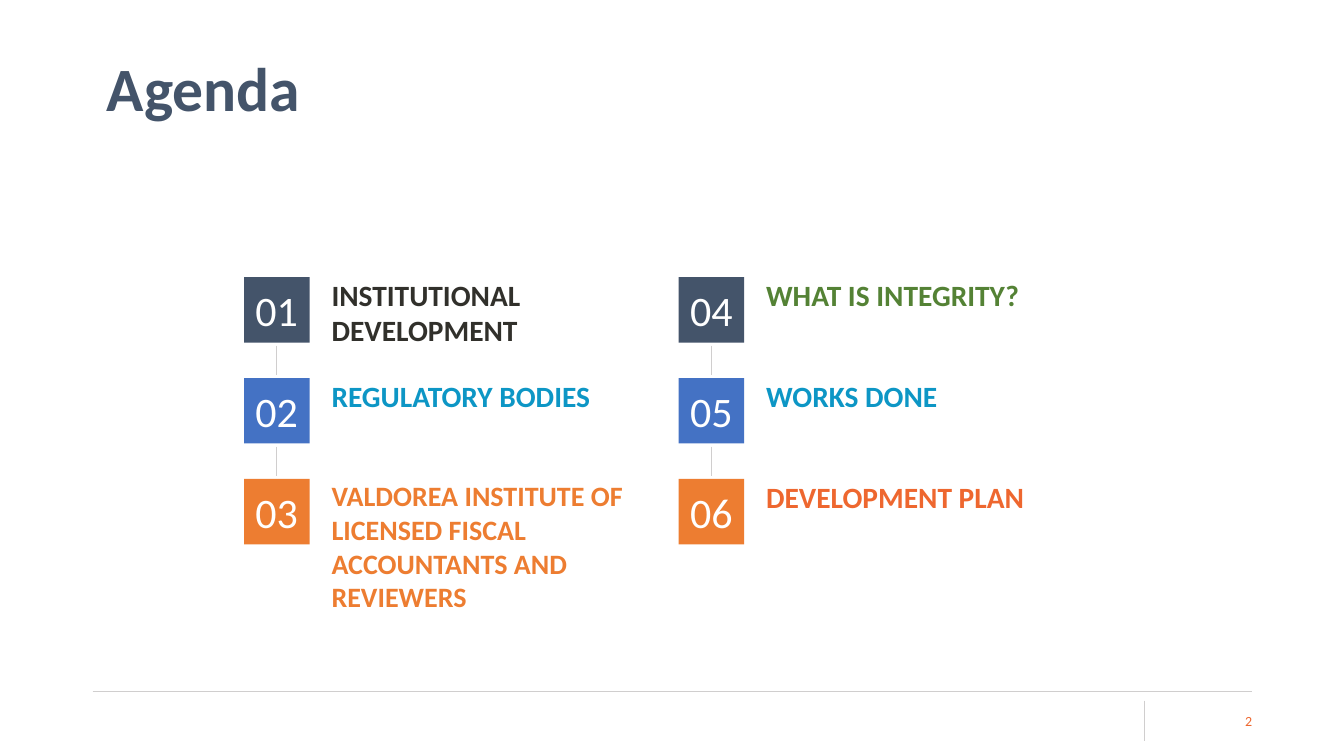
from pptx import Presentation
from pptx.dml.color import RGBColor
from pptx.enum import shapes, text
from pptx.oxml.ns import qn
from pptx.util import Inches, Pt
from lxml import etree

COLORS = {
    "navy": "44546A", "blue": "4472C4", "orange": "ED7D31", "white": "FFFFFF",
    "ink": "31302B", "cyan": "0D96C5", "green": "548235", "coral": "EE672F",
    "rule": "D0CECE",
}

# Agenda grid: two columns of three rows
COLUMNS = [2.42, 6.73]
TOP, ROW_STEP = 2.75, 1.0
BADGE, LABEL_OFFSET, LINK_GAP = 0.65, 0.77, 0.03
BADGE_COLORS = ["navy", "blue", "orange"]
# Wording, colour, size, width, height
TOPICS = [
    [("INSTITUTIONAL DEVELOPMENT", "ink", 21, 3.46, 0.71),
     ("REGULATORY BODIES", "cyan", 21, 3.46, 0.35),
     ("VALDOREA INSTITUTE OF LICENSED FISCAL ACCOUNTANTS AND REVIEWERS",
      "orange", 20, 3.46, 1.35)],
    [("WHAT IS INTEGRITY?", "green", 21, 5.23, 0.71),
     ("WORKS DONE", "cyan", 21, 3.46, 0.35),
     ("DEVELOPMENT PLAN", "coral", 21, 3.46, 0.35)],
]

prs = Presentation()
prs.slide_width, prs.slide_height = Inches(13.33), Inches(7.5)
slide = prs.slides.add_slide(prs.slide_layouts[5])


def write(shape, wording, size, color, align="LEFT", anchor="TOP",
          margins=(0.1, 0, 0.1, 0), bold=False):
    frame = shape.text_frame
    frame.text = wording
    frame.word_wrap = True
    frame.auto_size = text.MSO_AUTO_SIZE.NONE
    frame.vertical_anchor = text.MSO_ANCHOR[anchor]
    (frame.margin_left, frame.margin_top,
     frame.margin_right, frame.margin_bottom) = map(Inches, margins)
    paragraph = frame.paragraphs[0]
    paragraph.alignment = text.PP_ALIGN[align]
    font = paragraph.runs[0].font
    font.name, font.size, font.bold = "Calibri", Pt(size), bold
    font.color.rgb = RGBColor.from_string(COLORS[color])
    return paragraph


def draw_line(x1, y1, x2, y2):
    line = slide.shapes.add_connector(
        shapes.MSO_CONNECTOR.STRAIGHT, *map(Inches, (x1, y1, x2, y2)))
    line.line.color.rgb = RGBColor.from_string(COLORS["rule"])
    line.line.width = Pt(0.5)
    etree.SubElement(line._element.spPr, qn("a:effectLst"))


# Footer rules
draw_line(0.92, 6.86, 12.42, 6.86)
draw_line(11.35, 6.95, 11.35, 7.35)

# Numbered topics, linked down each column
for column, (left, topics) in enumerate(zip(COLUMNS, TOPICS)):
    for row, (wording, color, size, width, height) in enumerate(topics):
        top = TOP + row * ROW_STEP
        topic = slide.shapes.add_textbox(
            *map(Inches, (left + LABEL_OFFSET, top, width, height)))
        write(topic, wording, size, color, bold=True)

        badge = slide.shapes.add_shape(
            shapes.MSO_SHAPE.RECTANGLE, *map(Inches, (left, top, BADGE, BADGE)))
        badge.shadow.inherit = False
        badge.fill.solid()
        badge.fill.fore_color.rgb = RGBColor.from_string(COLORS[BADGE_COLORS[row]])
        badge.line.fill.background()
        number = column * len(topics) + row + 1
        write(badge, f"{number:02}", 30, "white", "CENTER", "MIDDLE", (0, 0, 0, 0))

        if row:
            center = left + BADGE / 2
            draw_line(center, top - ROW_STEP + BADGE + LINK_GAP,
                      center, top - LINK_GAP)

# Title
title = slide.shapes.title
title.left, title.top, title.width, title.height = map(
    Inches, (0.92, 0.18, 10.47, 1.45))
heading = write(title, "Agenda", 44, "navy", anchor="MIDDLE",
                margins=(0.14, 0.05, 0.1, 0.05), bold=True)
heading.line_spacing = 0.9

# Page number
page = slide.shapes.add_textbox(*map(Inches, (11.47, 6.95, 0.95, 0.4)))
write(page, "2", 10, "coral", "RIGHT", "MIDDLE", (0, 0.05, 0, 0.05))

prs.save("out.pptx")
